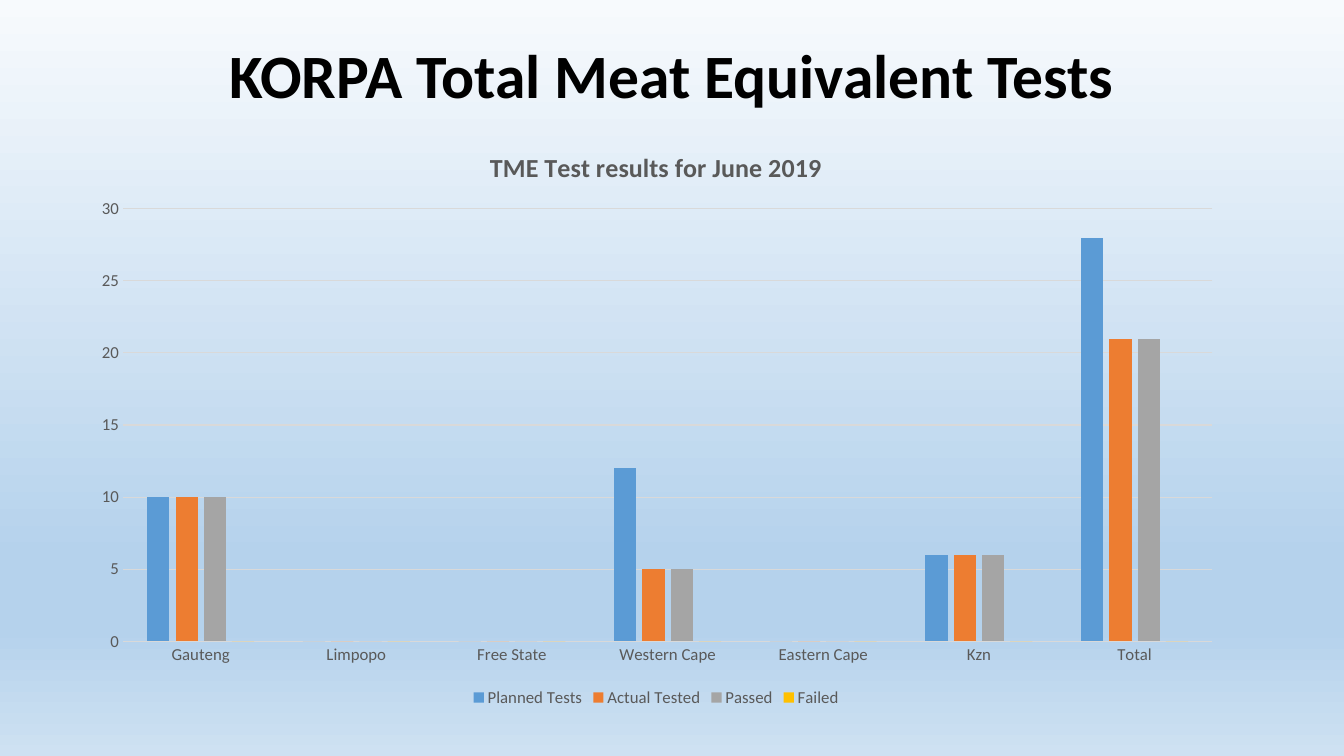
from copy import deepcopy
from dataclasses import dataclass

from lxml.etree import SubElement
from pptx import Presentation
from pptx.chart.chart import Chart
from pptx.chart.data import CategoryChartData
from pptx.dml.color import RGBColor
from pptx.enum.chart import XL_CHART_TYPE, XL_LEGEND_POSITION, XL_TICK_MARK
from pptx.enum.text import MSO_ANCHOR, PP_ALIGN
from pptx.oxml.ns import qn
from pptx.slide import Slide
from pptx.text.text import Font
from pptx.util import Cm, Pt

BLACK = RGBColor(0x00, 0x00, 0x00)
TEXT_GREY = RGBColor(0x59, 0x59, 0x59)
LINE_GREY = RGBColor(0xD9, 0xD9, 0xD9)
BLUE = RGBColor(0x5B, 0x9B, 0xD5)
ORANGE = RGBColor(0xED, 0x7D, 0x31)
GREY = RGBColor(0xA5, 0xA5, 0xA5)
GOLD = RGBColor(0xFF, 0xC0, 0x00)
PALE_SKY = RGBColor(0xF7, 0xFA, 0xFD)
SKY = RGBColor(0xB5, 0xD2, 0xEC)
LIGHT_SKY = RGBColor(0xCE, 0xE1, 0xF2)


@dataclass
class TestSeries:
    name: str
    values: tuple[int, ...]
    color: RGBColor


@dataclass
class Stop:
    position: float
    color: RGBColor


PROVINCES = ("Gauteng", "Limpopo", "Free State", "Western Cape",
             "Eastern Cape", "Kzn", "Total")
TEST_SERIES = (
    TestSeries("Planned Tests", (10, 0, 0, 12, 0, 6, 28), BLUE),
    TestSeries("Actual Tested", (10, 0, 0, 5, 0, 6, 21), ORANGE),
    TestSeries("Passed", (10, 0, 0, 5, 0, 6, 21), GREY),
    TestSeries("Failed", (0, 0, 0, 0, 0, 0, 0), GOLD),
)
BACKGROUND_STOPS = (Stop(0, PALE_SKY), Stop(0.74, SKY),
                    Stop(0.83, SKY), Stop(1, LIGHT_SKY))


def style_font(font: Font, size: float, color: RGBColor, bold: bool = False) -> None:
    font.name = "Calibri"
    font.size = Pt(size)
    font.bold = bold
    font.color.rgb = color


def paint_background(page: Slide) -> None:
    fill = page.background.fill
    fill.gradient()
    fill.gradient_angle = 270
    stop_list = page.element.find(".//" + qn("a:gsLst"))
    while len(stop_list) < len(BACKGROUND_STOPS):
        stop_list.append(deepcopy(stop_list[0]))
    for stop, wanted in zip(fill.gradient_stops, BACKGROUND_STOPS):
        stop.position = wanted.position
        stop.color.rgb = wanted.color


def add_heading(page: Slide) -> None:
    box = page.shapes.add_textbox(Cm(2.33), Cm(1.02), Cm(29.21), Cm(3.68))
    frame = box.text_frame
    frame.word_wrap = True
    frame.vertical_anchor = MSO_ANCHOR.TOP
    frame.text = "KORPA Total Meat Equivalent Tests"
    para = frame.paragraphs[0]
    para.alignment = PP_ALIGN.CENTER
    para.line_spacing = 0.9
    style_font(para.runs[0].font, 44, BLACK, bold=True)


def place_plot(chart: Chart) -> None:
    """Fix the inner plot area as fractions of the chart frame."""
    plot_area = chart.element.find(".//" + qn("c:plotArea"))
    layout = plot_area.find(qn("c:layout"))
    if layout is None:
        layout = SubElement(plot_area, qn("c:layout"))
        plot_area.insert(0, layout)
    manual = SubElement(layout, qn("c:manualLayout"))
    settings = {"layoutTarget": "inner", "xMode": "edge", "yMode": "edge",
                "x": 0.04, "y": 0.14, "w": 0.94, "h": 0.74}
    for tag, value in settings.items():
        SubElement(manual, qn(f"c:{tag}")).set("val", str(value))


def style_axes(chart: Chart) -> None:
    for axis in (chart.category_axis, chart.value_axis):
        axis.major_tick_mark = XL_TICK_MARK.NONE
        axis.minor_tick_mark = XL_TICK_MARK.NONE
        style_font(axis.tick_labels.font, 12, TEXT_GREY)
    value_axis = chart.value_axis
    value_axis.minimum_scale = 0
    value_axis.maximum_scale = 30
    value_axis.major_unit = 5
    value_axis.format.line.fill.background()
    value_axis.has_major_gridlines = True
    for line in (chart.category_axis.format.line,
                 value_axis.major_gridlines.format.line):
        line.color.rgb = LINE_GREY
        line.width = Pt(0.75)


def add_results_chart(page: Slide) -> None:
    data = CategoryChartData()
    data.categories = PROVINCES
    for series in TEST_SERIES:
        data.add_series(series.name, series.values)
    chart = page.shapes.add_chart(
        XL_CHART_TYPE.COLUMN_CLUSTERED,
        Cm(1.93), Cm(3.2), Cm(29.21), Cm(14.73), data).chart
    style_font(chart.font, 10, BLACK)

    chart.has_title = True
    title_frame = chart.chart_title.text_frame
    title_frame.text = "TME Test results for June 2019"
    style_font(title_frame.paragraphs[0].runs[0].font, 18.6, TEXT_GREY, bold=True)
    chart.chart_title.include_in_layout = False

    chart.has_legend = True
    chart.legend.position = XL_LEGEND_POSITION.BOTTOM
    chart.legend.include_in_layout = False
    style_font(chart.legend.font, 12, TEXT_GREY)

    plot = chart.plots[0]
    plot.vary_by_categories = False
    plot.gap_width = 219
    plot.overlap = -27
    for columns, series in zip(plot.series, TEST_SERIES):
        columns.format.fill.solid()
        columns.format.fill.fore_color.rgb = series.color
    style_axes(chart)
    place_plot(chart)


def main() -> None:
    deck = Presentation()
    deck.slide_width = Cm(33.87)
    deck.slide_height = Cm(19.05)
    page = deck.slides.add_slide(deck.slide_layouts[6])
    paint_background(page)
    add_heading(page)
    add_results_chart(page)
    deck.save("out.pptx")


if __name__ == "__main__":
    main()
